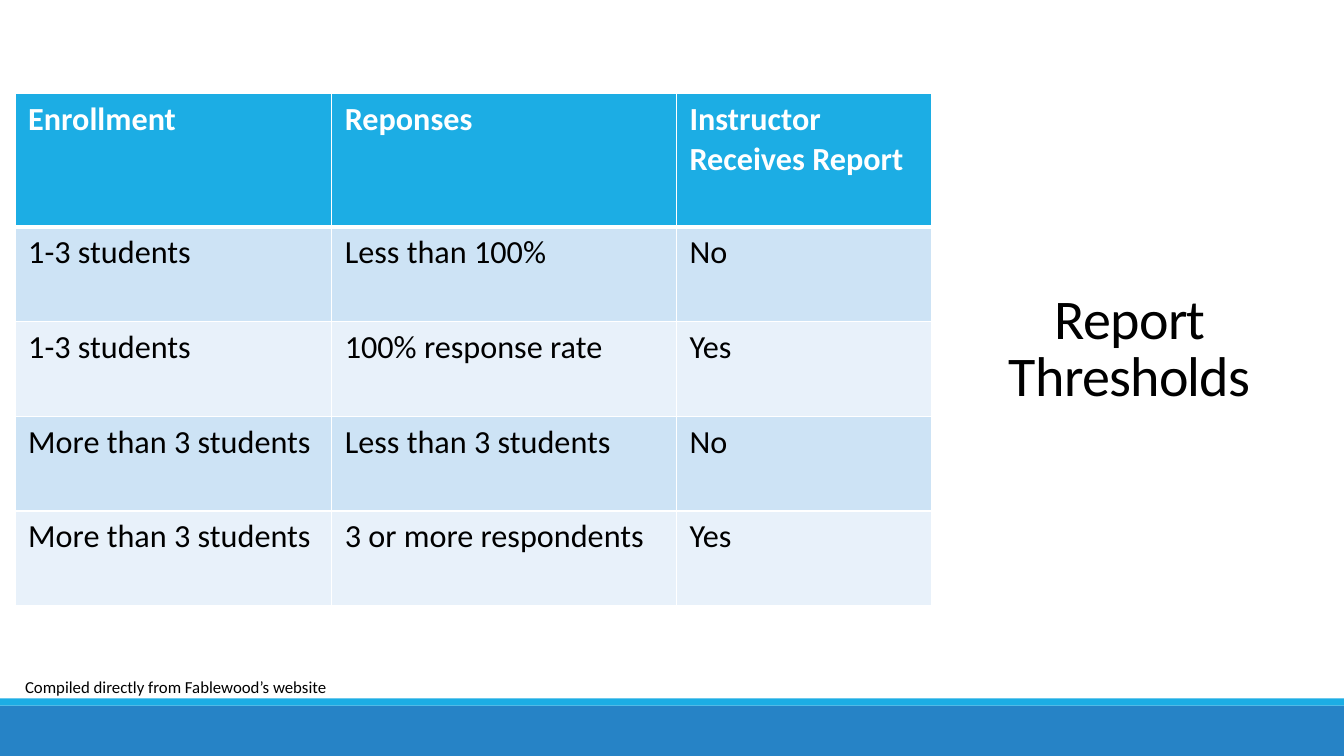
from lxml.etree import SubElement
from pptx import Presentation
from pptx.dml.color import RGBColor
from pptx.enum.shapes import MSO_SHAPE
from pptx.enum.text import MSO_ANCHOR, MSO_AUTO_SIZE, PP_ALIGN
from pptx.oxml.ns import qn
from pptx.util import Pt

PX = 9144  # 100 px to the inch
BLACK = RGBColor(0x00, 0x00, 0x00)
WHITE = RGBColor(0xFF, 0xFF, 0xFF)
SKY = RGBColor(0x1C, 0xAD, 0xE4)
BLUE = RGBColor(0x26, 0x83, 0xC6)
BAND_DARK = RGBColor(0xCD, 0xE3, 0xF5)
BAND_LIGHT = RGBColor(0xE8, 0xF1, 0xFA)


def style(p, size, color, bold=False):
    p.font.name = "Calibri"
    p.font.size = Pt(size)
    p.font.color.rgb = color
    p.font.bold = bold


def add_border(cell, side, width):
    ln = SubElement(cell._tc.get_or_add_tcPr(), qn(f"a:ln{side}"), w=str(Pt(width)))
    fill = SubElement(ln, qn("a:solidFill"))
    SubElement(fill, qn("a:srgbClr"), val=str(WHITE))


prs = Presentation()
prs.slide_width, prs.slide_height = 1333 * PX, 750 * PX
s = prs.slides.add_slide(prs.slide_layouts[6])

# Footer bars
for top, height, color in [(700, 50, BLUE), (693, 7, SKY)]:
    bar = s.shapes.add_shape(MSO_SHAPE.RECTANGLE, 0, top * PX, 1333 * PX, height * PX)
    bar.shadow.inherit = False
    bar.fill.solid()
    bar.fill.fore_color.rgb = color
    bar.line.fill.background()

# Title
sp = s.shapes.add_textbox(924 * PX, 284 * PX, 393 * PX, 126 * PX)
tf = sp.text_frame
tf.word_wrap = True
tf.vertical_anchor = MSO_ANCHOR.BOTTOM
p = tf.paragraphs[0]
p.alignment = PP_ALIGN.CENTER
p.line_spacing = 0.85
style(p, 40, BLACK)
r = p.add_run()
r.text = "Report Thresholds"
r.font._element.set("spc", "-50")

# Threshold table
rows = [
    ("Enrollment", "Reponses", "Instructor Receives Report"),
    ("1-3 students", "Less than 100%", "No"),
    ("1-3 students", "100% response rate", "Yes"),
    ("More than 3 students", "Less than 3 students", "No"),
    ("More than 3 students", "3 or more respondents", "Yes"),
]
table = s.shapes.add_table(5, 3, 15 * PX, 93 * PX, 909 * PX, 508 * PX).table
for column, width in zip(table.columns, (314, 342, 253)):
    column.width = width * PX
for i, texts in enumerate(rows):
    header = i == 0
    table.rows[i].height = (132 if header else 94) * PX
    for j, text in enumerate(texts):
        cell = table.cell(i, j)
        cell.margin_left = cell.margin_right = 13 * PX
        cell.margin_top = cell.margin_bottom = 6 * PX
        for side in "LRTB":
            thick = (header and side == "B") or (i == 1 and side == "T")
            add_border(cell, side, 3 if thick else 1)
        cell.fill.solid()
        cell.fill.fore_color.rgb = SKY if header else BAND_DARK if i % 2 else BAND_LIGHT
        cell.text = text
        style(cell.text_frame.paragraphs[0], 23, WHITE if header else BLACK, header)

# Source note
sp = s.shapes.add_textbox(15 * PX, 666 * PX, 377 * PX, 30 * PX)
tf = sp.text_frame
tf.word_wrap = False
tf.auto_size = MSO_AUTO_SIZE.SHAPE_TO_FIT_TEXT
p = tf.paragraphs[0]
p.text = "Compiled directly from Fablewood’s website"
style(p, 12, BLACK)

prs.save("out.pptx")
